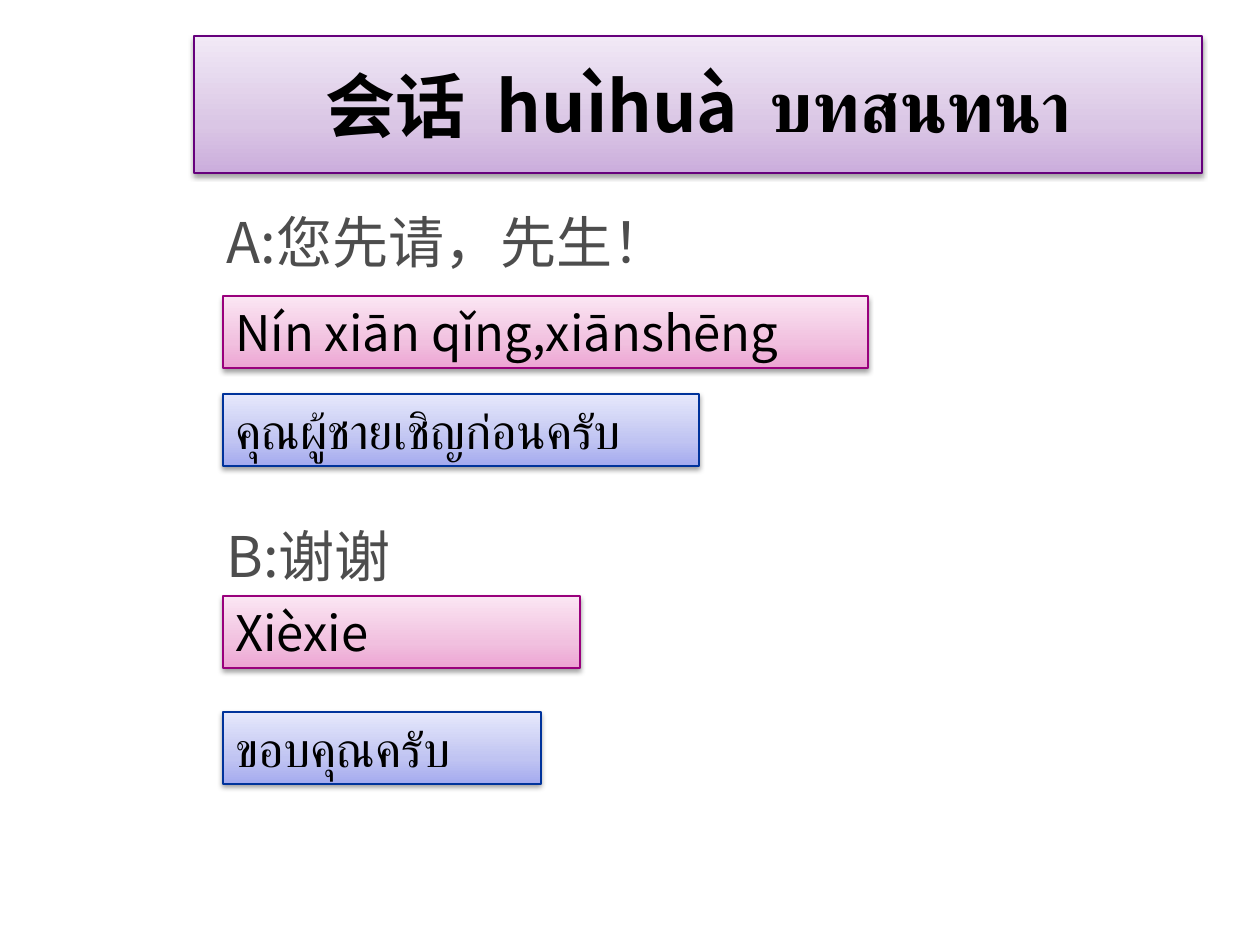
from copy import deepcopy

from lxml.etree import SubElement
from pptx import Presentation
from pptx.dml.color import RGBColor
from pptx.enum.shapes import MSO_SHAPE
from pptx.enum.text import MSO_ANCHOR, PP_ALIGN
from pptx.oxml.ns import qn
from pptx.util import Pt

PX = 914400 // 126
SANS, LATIN = "Noto Sans CJK SC", "Arial"
BLACK = RGBColor(0x00, 0x00, 0x00)
GREY = RGBColor(0x4D, 0x4D, 0x4D)

# Each style: outline, then gradient colours from bottom to top
PURPLE = (RGBColor(0x66, 0x00, 0x7C), (RGBColor(0xCB, 0xAD, 0xDC),
          RGBColor(0xDA, 0xC6, 0xE5), RGBColor(0xF1, 0xE9, 0xF6)))
PINK = (RGBColor(0x99, 0x00, 0x7C), (RGBColor(0xED, 0xA4, 0xD3),
        RGBColor(0xF1, 0xC0, 0xDF), RGBColor(0xFB, 0xE6, 0xF3)))
BLUE = (RGBColor(0x00, 0x33, 0x9B), (RGBColor(0xA4, 0xAA, 0xEF),
        RGBColor(0xC0, 0xC4, 0xF2), RGBColor(0xE6, 0xE8, 0xFB)))
STOPS = (0, 0.35, 1)

# Content
TITLE = [("会话  ", LATIN), ("huìhuà  ", SANS), ("บทสนทนา", LATIN)]
LINES = [("A:您先请，先生！", 201), ("B:谢谢", 515)]  # text, top
CARDS = [  # text, top, width, style
    ("Nín xiān qǐng,xiānshēng", 296, 645, PINK),
    ("คุณผู้ชายเชิญก่อนครับ", 394, 476, BLUE),
    ("Xièxie", 596, 357, PINK),
    ("ขอบคุณครับ", 712, 318, BLUE),
]
LINE_LEFT, LINE_WIDTH, LINE_HEIGHT = 214, 980, 81
CARD_LEFT, CARD_HEIGHT = 223, 72


def write_text(shape, runs, size, color=BLACK, bold=False, align=PP_ALIGN.LEFT):
    frame = shape.text_frame
    frame.word_wrap = True
    frame.vertical_anchor = MSO_ANCHOR.MIDDLE
    frame.margin_top = frame.margin_bottom = 0
    paragraph = frame.paragraphs[0]
    paragraph.alignment = align
    for text, font_name in runs:
        run = paragraph.add_run()
        run.text = text
        run.font.name = font_name
        run.font.size = Pt(size)
        run.font.bold = bold
        run.font.color.rgb = color
        east_asian = SubElement(run.font._element, qn("a:ea"))
        east_asian.set("typeface", SANS)


def add_panel(slide, left, top, width, height, style):
    outline, colors = style
    shape = slide.shapes.add_shape(MSO_SHAPE.RECTANGLE, left * PX, top * PX,
                                   width * PX, height * PX)
    shape.line.color.rgb = outline
    shape.line.width = Pt(0.75)
    # Three-stop vertical gradient
    shape.fill.gradient()
    shape.fill.gradient_angle = 90
    properties = shape._element.spPr
    stop_list = properties.find(".//" + qn("a:gsLst"))
    stop_list.append(deepcopy(stop_list[0]))
    for stop, position, color in zip(shape.fill.gradient_stops, STOPS, colors):
        stop.position = position
        stop.color.rgb = color
    # Soft shadow below
    shape.shadow.inherit = False
    shadow = SubElement(properties.find(qn("a:effectLst")), qn("a:outerShdw"),
                        blurRad=str(Pt(3.1)), dist=str(Pt(1.6)),
                        dir="5400000", rotWithShape="0")
    shadow_color = SubElement(shadow, qn("a:srgbClr"), val="000000")
    SubElement(shadow_color, qn("a:alpha"), val="38000")
    return shape


presentation = Presentation()
presentation.slide_width = 1260 * PX
presentation.slide_height = 945 * PX
slide = presentation.slides.add_slide(presentation.slide_layouts[6])

# Title
title = add_panel(slide, 194, 36, 1008, 137, PURPLE)
write_text(title, TITLE, 40, bold=True, align=PP_ALIGN.CENTER)

# Dialogue lines
for text, top in LINES:
    box = slide.shapes.add_textbox(LINE_LEFT * PX, top * PX,
                                   LINE_WIDTH * PX, LINE_HEIGHT * PX)
    write_text(box, [(text, SANS)], 32, color=GREY)

# Pinyin and Thai cards
for text, top, width, style in CARDS:
    card = add_panel(slide, CARD_LEFT, top, width, CARD_HEIGHT, style)
    write_text(card, [(text, SANS)], 28)

presentation.save("out.pptx")
